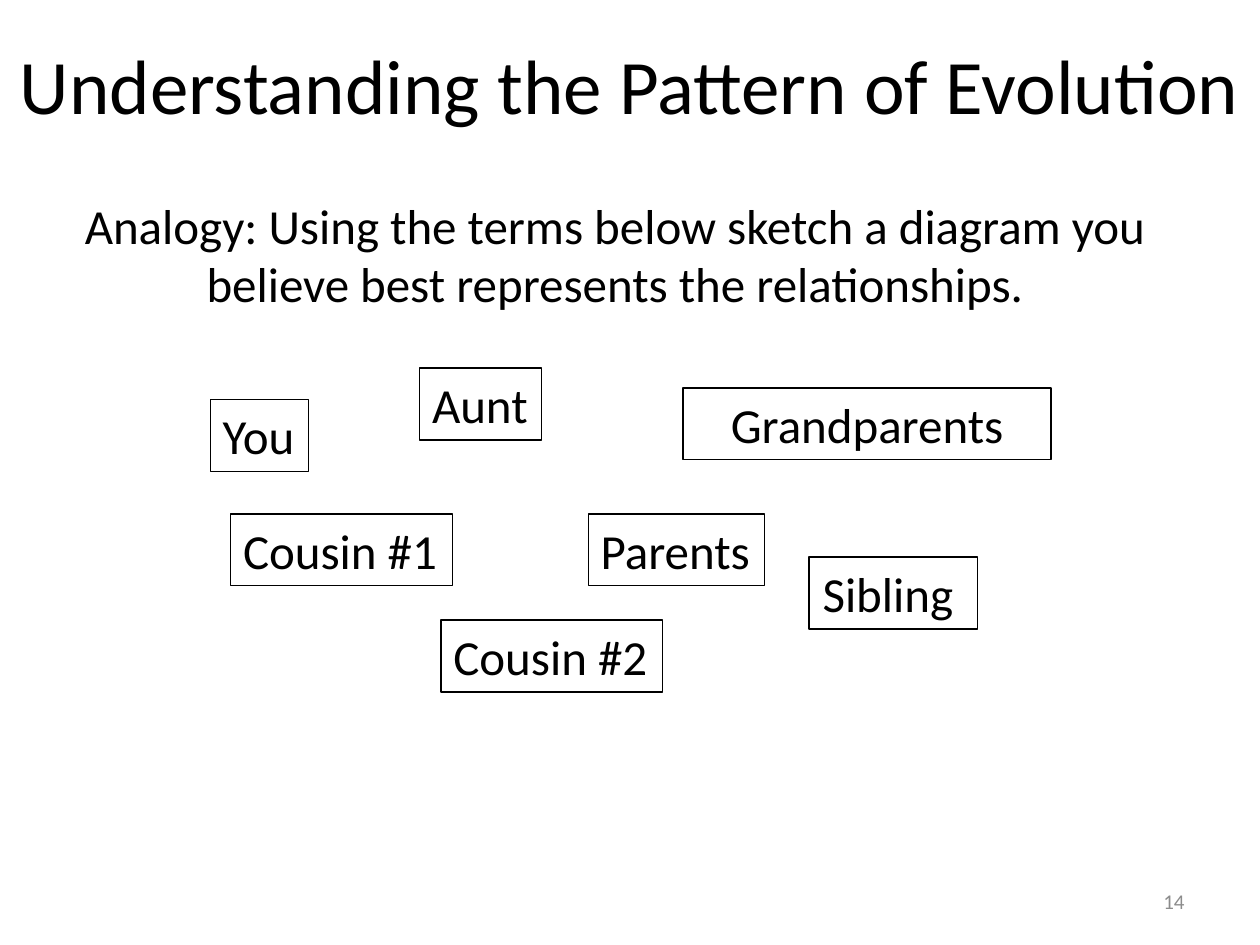
import pptx
import pptx.util
import pptx.dml.color
import pptx.enum.shapes
import pptx.enum.text

Cm, Pt = pptx.util.Cm, pptx.util.Pt
ALIGN = pptx.enum.text.PP_ALIGN
ANCHOR = pptx.enum.text.MSO_ANCHOR
FIT = pptx.enum.text.MSO_AUTO_SIZE
BLACK = pptx.dml.color.RGBColor(0x00, 0x00, 0x00)
GREY = pptx.dml.color.RGBColor(0x8C, 0x8C, 0x8C)
FONT = "Calibri"
BODY = 28
HIGH = 1.45  # height of every term box, cm

# Term, left, top, width (cm), alignment, wrap
TERMS = [
    ("You", 4.24, 8.05, 1.98, ALIGN.LEFT, False),
    ("Cousin #1", 4.65, 10.36, 4.47, ALIGN.LEFT, False),
    ("Aunt", 8.46, 7.42, 2.46, ALIGN.LEFT, False),
    ("Parents", 11.86, 10.36, 3.56, ALIGN.LEFT, False),
    ("Cousin #2", 8.89, 12.5, 4.47, ALIGN.LEFT, False),
    ("Sibling ", 16.31, 11.23, 3.4, ALIGN.CENTER, False),
    ("Grandparents", 13.77, 7.82, 7.42, ALIGN.CENTER, True),
]


def write(shape, text, size, align, color=BLACK):
    para = shape.text_frame.paragraphs[0]
    para.alignment = align
    run = para.add_run()
    run.text = text
    run.font.name = FONT
    run.font.size = Pt(size)
    run.font.color.rgb = color


def add_text(slide, text, place, size, align, color=BLACK,
             anchor=ANCHOR.TOP, fit=FIT.SHAPE_TO_FIT_TEXT):
    box = slide.shapes.add_textbox(*map(Cm, place))
    frame = box.text_frame
    frame.word_wrap = True
    frame.auto_size = fit
    frame.vertical_anchor = anchor
    write(box, text, size, align, color)


def add_term(slide, text, left, top, width, align, wrap):
    box = slide.shapes.add_shape(
        pptx.enum.shapes.MSO_SHAPE.RECTANGLE,
        Cm(left), Cm(top), Cm(width), Cm(HIGH))
    box.shadow.inherit = False
    box.fill.background()
    box.line.color.rgb = BLACK
    box.line.width = Pt(0.75)
    frame = box.text_frame
    frame.word_wrap = wrap
    frame.auto_size = FIT.SHAPE_TO_FIT_TEXT
    frame.vertical_anchor = ANCHOR.TOP
    write(box, text, BODY, align)


def main():
    deck = pptx.Presentation()
    deck.slide_width, deck.slide_height = Cm(25.4), Cm(19.05)
    slide = deck.slides.add_slide(deck.slide_layouts[6])

    # Slide number
    add_text(slide, "14", (18.21, 17.65, 5.92, 1.02), 12, ALIGN.RIGHT,
             GREY, ANCHOR.MIDDLE, FIT.NONE)

    # Task
    add_text(slide, "Analogy: Using the terms below sketch a diagram you "
             "believe best represents the relationships.",
             (0.43, 3.81, 23.93, 2.64), BODY, ALIGN.CENTER)

    # Family terms
    for term in TERMS:
        add_term(slide, *term)

    # Title
    add_text(slide, "Understanding the Pattern of Evolution",
             (0, 0.64, 25.4, 2.13), 44, ALIGN.CENTER)

    deck.save("out.pptx")


if __name__ == "__main__":
    main()
